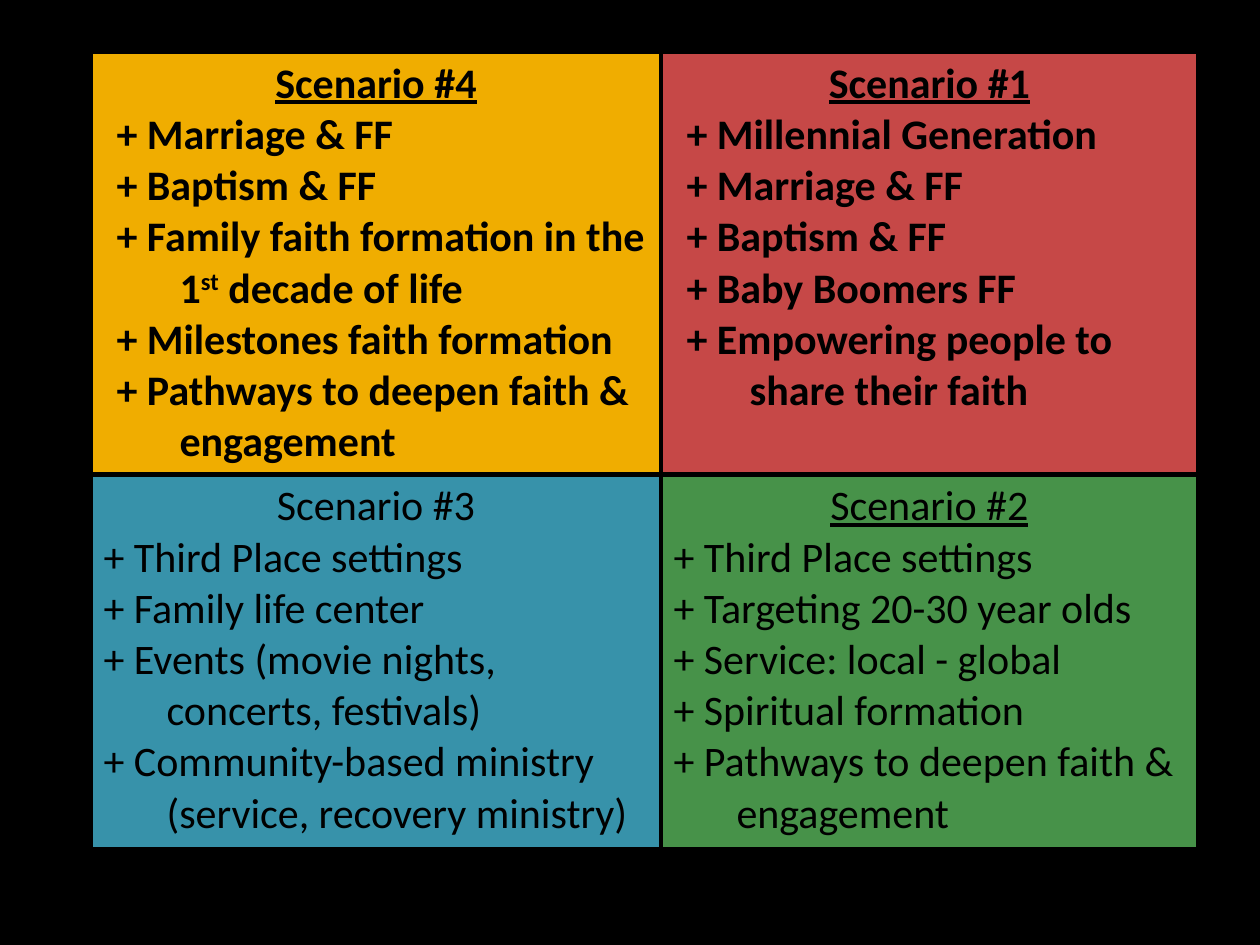
"""Build a slide with a two-by-two grid of faith formation scenarios."""
import pptx
import pptx.dml.color
import pptx.enum.text
import pptx.oxml
import pptx.oxml.ns
import pptx.util
from lxml import etree

RGB = pptx.dml.color.RGBColor
BLACK = RGB(0x00, 0x00, 0x00)
AMBER = RGB(0xF0, 0xAD, 0x00)
RED = RGB(0xC6, 0x48, 0x47)
BLUE = RGB(0x37, 0x92, 0xAA)
GREEN = RGB(0x47, 0x92, 0x49)
EMU_PER_PX = 914400 / 126

SCENARIOS = [
    [
        dict(title="Scenario #4", fill=AMBER, bold=True, underline=True, indent=76, items=[
            "+ Marriage & FF",
            "+ Baptism & FF",
            "+ Family faith formation in the 1^st^ decade of life",
            "+ Milestones faith formation",
            "+ Pathways to deepen faith & engagement"]),
        dict(title="Scenario #1", fill=RED, bold=True, underline=True, indent=76, items=[
            "+ Millennial Generation",
            "+ Marriage & FF",
            "+ Baptism & FF",
            "+ Baby Boomers FF",
            "+ Empowering people to share their faith"]),
    ],
    [
        dict(title="Scenario #3", fill=BLUE, bold=False, underline=False, indent=63, items=[
            "+ Third Place settings",
            "+ Family life center",
            "+ Events (movie nights, concerts, festivals)",
            "+ Community-based ministry (service, recovery ministry)"]),
        dict(title="Scenario #2", fill=GREEN, bold=False, underline=True, indent=63, items=[
            "+ Third Place settings",
            "+ Targeting 20-30 year olds",
            "+ Service: local - global",
            "+ Spiritual formation",
            "+ Pathways to deepen faith & engagement"]),
    ],
]


def px(n):
    return pptx.util.Emu(round(n * EMU_PER_PX))


class Deck:
    """Hold the text style and the current slide."""

    font, size, hanging, border = "Calibri", 24, 63, 3

    def __init__(self, width, height):
        self.prs = pptx.Presentation()
        self.prs.slide_width, self.prs.slide_height = px(width), px(height)

    def slide(self, color):
        self.s = self.prs.slides.add_slide(self.prs.slide_layouts[6])
        self.s.background.fill.solid()
        self.s.background.fill.fore_color.rgb = color

    def table(self, left, top, widths, heights, rows):
        frame = self.s.shapes.add_table(len(heights), len(widths), px(left), px(top),
                                        px(sum(widths)), px(sum(heights)))
        table = frame.table
        table.first_row = table.horz_banding = False
        for column, width in zip(table.columns, widths):
            column.width = px(width)
        for row, height, scenarios in zip(table.rows, heights, rows):
            row.height = px(height)
            for cell, scenario in zip(row.cells, scenarios):
                self.cell(cell, **scenario)

    def cell(self, cell, title, items, fill, bold, underline, indent):
        self.borders(cell)
        cell.fill.solid()
        cell.fill.fore_color.rgb = fill
        tf = cell.text_frame
        p = tf.paragraphs[0]
        p.alignment = pptx.enum.text.PP_ALIGN.CENTER
        self.text(p, title, bold, underline)
        for item in items:
            p = tf.add_paragraph()
            pPr = p._p.get_or_add_pPr()
            pPr.set("marL", str(px(indent)))
            pPr.set("indent", str(-px(self.hanging)))
            self.text(p, item, bold, False)

    def text(self, p, text, bold, underline):
        """Add runs, raising the parts between carets."""
        for i, part in enumerate(text.split("^")):
            r = p.add_run()
            r.text = part
            r.font.name, r.font.size = self.font, pptx.util.Pt(self.size)
            r.font.bold, r.font.underline = bold, underline
            r.font.color.rgb = BLACK
            if i % 2:
                r._r.get_or_add_rPr().set("baseline", "30000")

    def borders(self, cell):
        qn = pptx.oxml.ns.qn
        tcPr = cell._tc.get_or_add_tcPr()
        for side in ("lnL", "lnR", "lnT", "lnB"):
            ln = etree.SubElement(tcPr, qn("a:" + side), w=str(pptx.util.Pt(self.border)))
            fill = etree.SubElement(ln, qn("a:solidFill"))
            etree.SubElement(fill, qn("a:srgbClr"), val=str(BLACK))


def main():
    deck = Deck(1260, 945)
    deck.slide(BLACK)
    deck.table(91, 52, [570, 537], [417, 375], SCENARIOS)
    deck.prs.save("out.pptx")


if __name__ == "__main__":
    main()
